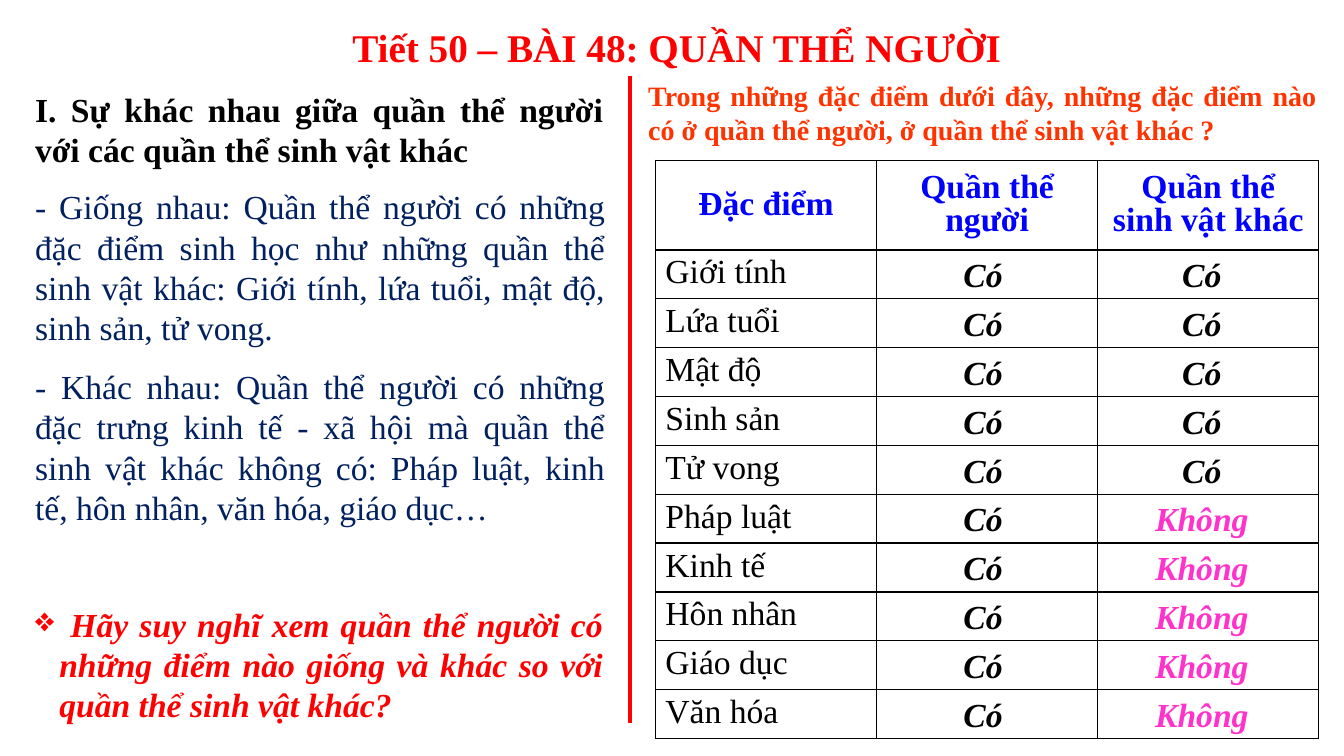
import pptx
import pptx.util
import pptx.dml.color
import pptx.enum.shapes
import pptx.enum.text
import pptx.oxml
import pptx.oxml.ns
from lxml import etree

Inches = pptx.util.Inches
Pt = pptx.util.Pt
RGBColor = pptx.dml.color.RGBColor
Align = pptx.enum.text.PP_ALIGN
Anchor = pptx.enum.text.MSO_ANCHOR
qn = pptx.oxml.ns.qn

RED = RGBColor(0xFF, 0x00, 0x00)
ORANGE = RGBColor(0xFF, 0x33, 0x00)
BLUE = RGBColor(0x00, 0x00, 0xFF)
NAVY = RGBColor(0x00, 0x20, 0x60)
PINK = RGBColor(0xFF, 0x33, 0xCC)
BLACK = RGBColor(0x00, 0x00, 0x00)
WHITE = RGBColor(0xFF, 0xFF, 0xFF)

deck = pptx.Presentation()
deck.slide_width, deck.slide_height = Inches(13.33), Inches(7.5)
page = deck.slides.add_slide(deck.slide_layouts[6])


def write(frame, text, size=24, color=BLACK, bold=False, italic=False,
          align=Align.LEFT, gap=0, bullet=None):
    """Fill a text frame, one paragraph per line of text."""
    frame.word_wrap = True
    for number, line in enumerate(text.split("\n")):
        para = frame.paragraphs[0] if number == 0 else frame.add_paragraph()
        para.alignment = align
        if number:
            para.space_before = Pt(gap)
        if bullet:
            properties = para._p.get_or_add_pPr()
            properties.set("marL", str(Inches(0.24)))
            properties.set("indent", str(-Inches(0.24)))
            etree.SubElement(properties, qn("a:buChar")).set("char", bullet)
        span = para.add_run()
        span.text = line
        span.font.name = "Times New Roman"
        span.font.size = Pt(size)
        span.font.color.rgb = color
        span.font.bold = bold
        span.font.italic = italic


def add_text(left, top, width, height, text, **style):
    box = page.shapes.add_textbox(Inches(left), Inches(top), Inches(width), Inches(height))
    write(box.text_frame, text, **style)
    box.text_frame.auto_size = pptx.enum.text.MSO_AUTO_SIZE.SHAPE_TO_FIT_TEXT


# Title and left column
add_text(3.17, 0.18, 7.08, 0.57, "Tiết 50 – BÀI 48: QUẦN THỂ NGƯỜI",
         size=28, color=RED, bold=True, align=Align.CENTER)
add_text(0.25, 0.83, 5.83, 0.91,
         "I. Sự khác nhau giữa quần thể người với các quần thể sinh vật khác",
         bold=True, align=Align.JUSTIFY)
add_text(0.25, 1.8, 5.85, 3.53,
         "- Giống nhau: Quần thể người có những đặc điểm sinh học như những quần thể "
         "sinh vật khác: Giới tính, lứa tuổi, mật độ, sinh sản, tử vong.\n"
         "- Khác nhau: Quần thể người có những đặc trưng kinh tế - xã hội mà quần thể "
         "sinh vật khác không có: Pháp luật, kinh tế, hôn nhân, văn hóa, giáo dục…",
         color=NAVY, align=Align.JUSTIFY, gap=13)
add_text(0.25, 5.94, 5.83, 1.31,
         " Hãy suy nghĩ xem quần thể người có những điểm nào giống và khác "
         "so với quần thể sinh vật khác?",
         color=RED, bold=True, italic=True, align=Align.JUSTIFY, bullet="❖")

# Divider
divider = page.shapes.add_connector(pptx.enum.shapes.MSO_CONNECTOR.STRAIGHT,
                                    Inches(6.25), Inches(0.75), Inches(6.25), Inches(7.17))
divider.line.color.rgb = RED
divider.line.width = Pt(3)
etree.SubElement(divider._element.spPr, qn("a:effectLst"))

# Question above the table
add_text(6.33, 0.73, 6.83, 0.77,
         "Trong những đặc điểm dưới đây, những đặc điểm nào có ở quần thể người, "
         "ở quần thể sinh vật khác ?",
         size=20, color=ORANGE, bold=True, align=Align.JUSTIFY)

# Comparison table
headings = ["Đặc điểm", "Quần thể người", "Quần thể sinh vật khác"]
traits = ["Giới tính", "Lứa tuổi", "Mật độ", "Sinh sản", "Tử vong",
          "Pháp luật", "Kinh tế", "Hôn nhân", "Giáo dục", "Văn hóa"]
shared_traits = 5
header_height, row_height = 0.89, 0.485

table = page.shapes.add_table(len(traits) + 1, len(headings), Inches(6.5), Inches(1.59),
                              Inches(6.58), Inches(5.74)).table
table.first_row = table.horz_banding = False
for column in table.columns:
    column.width = Inches(6.58 / 3)
for number, row in enumerate(table.rows):
    row.height = Inches(row_height if number else header_height)

for cell in table.iter_cells():
    cell.margin_left = cell.margin_right = Inches(0.1)
    cell.margin_top = cell.margin_bottom = Inches(0.04)
    properties = cell._tc.get_or_add_tcPr()
    for side in ("lnL", "lnR", "lnT", "lnB"):
        border = etree.SubElement(properties, qn("a:" + side), w=str(Pt(1)))
        paint = etree.SubElement(border, qn("a:solidFill"))
        etree.SubElement(paint, qn("a:srgbClr"), val=str(BLACK))
    cell.fill.solid()
    cell.fill.fore_color.rgb = WHITE

for number, heading in enumerate(headings):
    cell = table.cell(0, number)
    cell.vertical_anchor = Anchor.MIDDLE
    write(cell.text_frame, heading, color=BLUE, bold=True, align=Align.CENTER)
    cell.text_frame.paragraphs[0].line_spacing = 0.9
for number, trait in enumerate(traits, start=1):
    write(table.cell(number, 0).text_frame, trait)

# Answers laid over the table rows
for number in range(len(traits)):
    top = 2.47 + number * row_height
    shared = number < shared_traits
    add_text(9, top, 1.5, 0.5, "Có", bold=True, italic=True, align=Align.CENTER)
    add_text(11.17, top, 1.5, 0.5, "Có" if shared else "Không",
             color=BLACK if shared else PINK, bold=True, italic=True, align=Align.CENTER)

deck.save("out.pptx")
